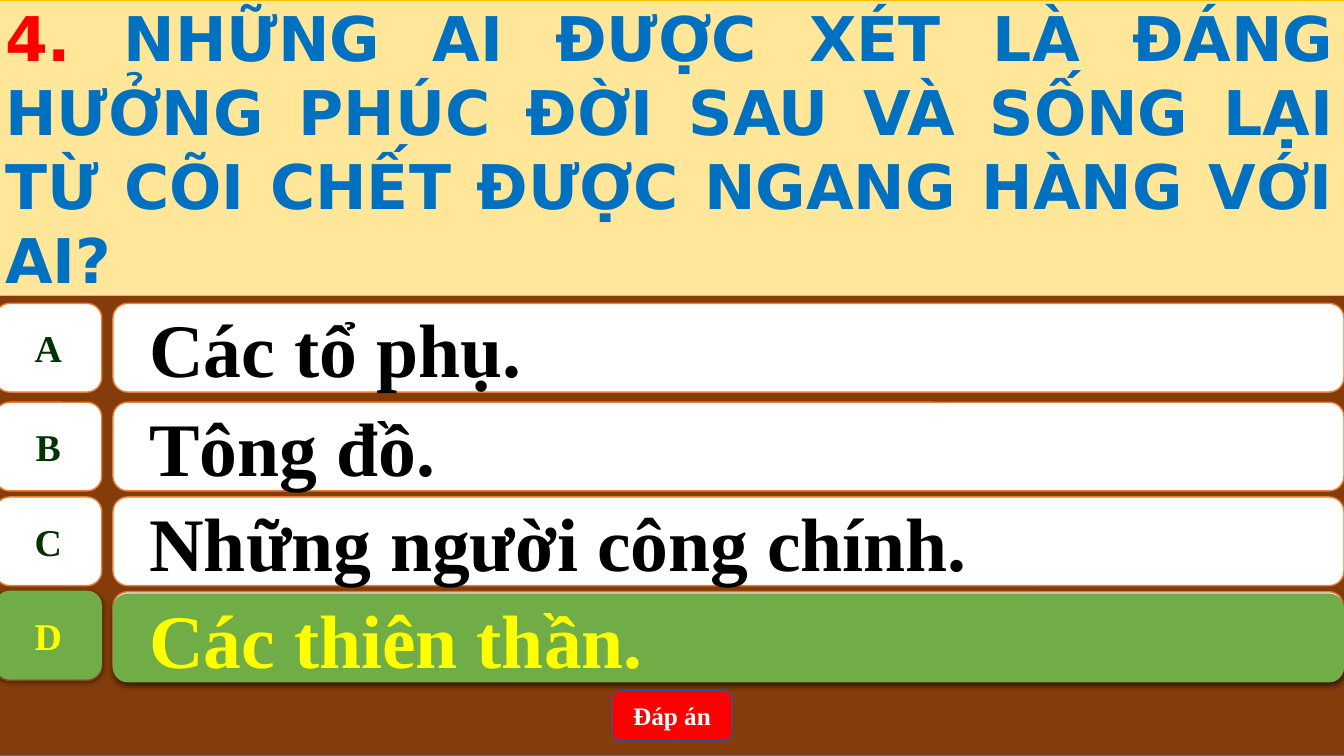
from lxml import etree
from pptx import Presentation, util as u
from pptx.dml.color import RGBColor
from pptx.enum import shapes, text
from pptx.oxml.ns import qn

WIDTH, HEIGHT = 13.33, 7.5
LEFT = -0.05
FULL_WIDTH = 13.39
SERIF = "Times New Roman"
KIND = shapes.MSO_SHAPE

ANSWERS = [
    ("A", "Các tổ phụ.", 3.01),
    ("B", "Tông đồ.", 3.99),
    ("C", "Những người công chính.", 4.93),
    ("D", "Các thiên thần.", 5.87),
]
PLAIN = {"fill": "FFFFFF", "line": ("ED7D31", 1)}
CORRECT = {"fill": "70AD47", "shadow": True}


def rgb(value):
    return RGBColor.from_string(value)


def place(shape, box):
    for side, value in zip(("left", "top", "width", "height"), box):
        setattr(shape, side, u.Inches(value))


def paint(shape, fill, line=None, shadow=False):
    shape.fill.solid()
    shape.fill.fore_color.rgb = rgb(fill)
    if line:
        shape.line.color.rgb = rgb(line[0])
        shape.line.width = u.Pt(line[1])
    else:
        shape.line.fill.background()
    if shadow:
        add_shadow(shape)


def add_shadow(shape):
    effects = shape._element.spPr.find(qn("a:effectLst"))
    outer = etree.SubElement(effects, qn("a:outerShdw"), blurRad=str(u.Pt(4.5)),
                             dist=str(u.Pt(1.5)), dir="5400000", algn="ctr", rotWithShape="0")
    black = etree.SubElement(outer, qn("a:srgbClr"), val="000000")
    etree.SubElement(black, qn("a:alpha"), val="63000")


def add_box(parent, kind, box, look):
    shape = parent.add_shape(kind, *map(u.Inches, box))
    shape.shadow.inherit = False
    paint(shape, **look)
    return shape


def write(shape, runs, size, font, align, wrap=True):
    """Fill the shape with one bold paragraph of (words, colour) runs."""
    frame = shape.text_frame
    frame.word_wrap = wrap
    frame.vertical_anchor = text.MSO_ANCHOR.MIDDLE
    paragraph = frame.paragraphs[0]
    paragraph.alignment = align
    for words, colour in runs:
        run = paragraph.add_run()
        run.text = words
        for name, value in {"size": u.Pt(size), "name": font, "bold": True}.items():
            setattr(run.font, name, value)
        run.font.color.rgb = rgb(colour)
    return paragraph


def add_answer(slide, letter, answer, letter_top, answer_top, look, letter_colour, answer_colour):
    row = slide.shapes.add_group_shape().shapes
    tile = add_box(row, KIND.FLOWCHART_ALTERNATE_PROCESS, (LEFT, letter_top, 1.06, 0.88), look)
    write(tile, [(letter, letter_colour)], 27, SERIF, text.PP_ALIGN.CENTER, wrap=False)
    bar = add_box(row, KIND.ROUNDED_RECTANGLE, (1.12, answer_top, 12.21, 0.88), look)
    paragraph = write(bar, [(answer, answer_colour)], 54, SERIF, text.PP_ALIGN.LEFT)
    paragraph.level = 1
    for name, inches in {"marL": 0.5, "indent": -0.28}.items():
        paragraph._p.get_or_add_pPr().set(name, str(u.Inches(inches)))


def add_question(slide, box):
    question = slide.shapes.title
    place(question, box)
    paint(question, "FFE699", ("FFC000", 0.5))
    paragraph = write(question, [
        ("4. ", "FF0000"),
        ("NHỮNG AI ĐƯỢC XÉT LÀ ĐÁNG HƯỞNG PHÚC ĐỜI SAU VÀ SỐNG LẠI "
         "TỪ CÕI CHẾT ĐƯỢC NGANG HÀNG VỚI AI?", "0070C0"),
    ], 44, "DejaVu Sans", text.PP_ALIGN.JUSTIFY)
    paragraph.line_spacing = 1.0
    question.text_frame.auto_size = text.MSO_AUTO_SIZE.NONE
    # The question lies in front of the backdrop.
    slide.shapes._spTree.append(question._element)


def add_answer_button(slide, box):
    button = add_box(slide.shapes, KIND.ROUNDED_RECTANGLE, box,
                     {"fill": "FF0000", "line": ("325491", 1)})
    write(button, [("Đáp án", "FFFFFF")], 18, SERIF, text.PP_ALIGN.CENTER)


def build_quiz_slide(deck):
    slide = deck.slides.add_slide(deck.slide_layouts[5])
    add_box(slide.shapes, KIND.RECTANGLE, (LEFT, 0, FULL_WIDTH, HEIGHT),
            {"fill": "843C0B", "line": ("43739E", 1)})
    for letter, answer, top in ANSWERS:
        add_answer(slide, letter, answer, top, top, PLAIN, "003300", "000000")
    letter, answer, top = ANSWERS[-1]
    add_answer(slide, letter, answer, top - 0.01, top + 0.02, CORRECT, "FFFF00", "FFFF00")
    add_answer_button(slide, (6.07, 6.85, 1.19, 0.5))
    add_question(slide, (LEFT, 0, FULL_WIDTH, 2.93))


def main():
    deck = Presentation()
    deck.slide_width, deck.slide_height = u.Inches(WIDTH), u.Inches(HEIGHT)
    build_quiz_slide(deck)
    deck.save("out.pptx")


if __name__ == "__main__":
    main()
